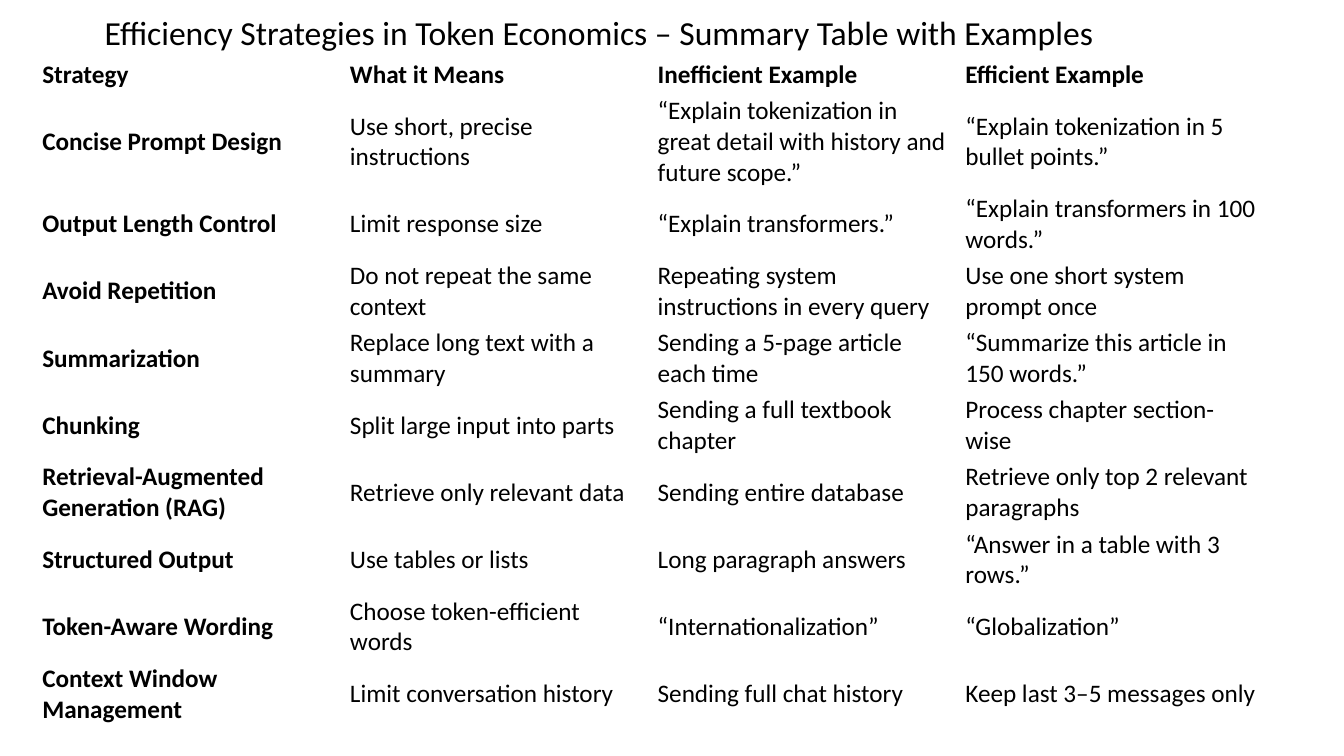
import pptx
import pptx.util
import pptx.dml.color
import pptx.enum.text

Pt = pptx.util.Pt
BLACK = pptx.dml.color.RGBColor(0, 0, 0)
FONT = "Calibri"

TITLE = "Efficiency Strategies in Token Economics – Summary Table with Examples"
STRATEGIES = [
    ("Strategy", "What it Means", "Inefficient Example", "Efficient Example"),
    ("Concise Prompt Design", "Use short, precise instructions",
     "“Explain tokenization in great detail with history and future scope.”",
     "“Explain tokenization in 5 bullet points.”"),
    ("Output Length Control", "Limit response size",
     "“Explain transformers.”", "“Explain transformers in 100 words.”"),
    ("Avoid Repetition", "Do not repeat the same context",
     "Repeating system instructions in every query",
     "Use one short system prompt once"),
    ("Summarization", "Replace long text with a summary",
     "Sending a 5-page article each time",
     "“Summarize this article in 150 words.”"),
    ("Chunking", "Split large input into parts",
     "Sending a full textbook chapter", "Process chapter section-wise"),
    ("Retrieval-Augmented Generation (RAG)", "Retrieve only relevant data",
     "Sending entire database", "Retrieve only top 2 relevant paragraphs"),
    ("Structured Output", "Use tables or lists",
     "Long paragraph answers", "“Answer in a table with 3 rows.”"),
    ("Token-Aware Wording", "Choose token-efficient words",
     "“Internationalization”", "“Globalization”"),
    ("Context Window Management", "Limit conversation history",
     "Sending full chat history", "Keep last 3–5 messages only"),
]
HEADER_HEIGHT = 26
PROMPT_HEIGHT = 69.9
STRATEGY_HEIGHT = 47.9


def add_run(paragraph, text, size, bold=False):
    run = paragraph.add_run()
    run.text = text
    run.font.name = FONT
    run.font.size = Pt(size)
    run.font.bold = bold
    run.font.color.rgb = BLACK


def add_title(slide, left, top, width, height):
    title = slide.shapes.add_textbox(Pt(left), Pt(top), Pt(width), Pt(height))
    title.text_frame.word_wrap = True
    title.text_frame.auto_size = pptx.enum.text.MSO_AUTO_SIZE.SHAPE_TO_FIT_TEXT
    add_run(title.text_frame.paragraphs[0], TITLE, 24)


def add_strategy_table(slide, left, top, width):
    heights = [HEADER_HEIGHT, PROMPT_HEIGHT]
    heights += [STRATEGY_HEIGHT] * (len(STRATEGIES) - len(heights))
    columns = len(STRATEGIES[0])
    summary = slide.shapes.add_table(
        len(STRATEGIES), columns,
        Pt(left), Pt(top), Pt(width), Pt(sum(heights))).table
    summary.first_row = False
    summary.horz_banding = False
    for column in summary.columns:
        column.width = Pt(width / columns)
    for row_index, (strategy, height) in enumerate(zip(STRATEGIES, heights)):
        summary.rows[row_index].height = Pt(height)
        for column_index, text in enumerate(strategy):
            cell = summary.cell(row_index, column_index)
            cell.fill.background()
            cell.vertical_anchor = pptx.enum.text.MSO_ANCHOR.MIDDLE
            cell.margin_left = cell.margin_right = Pt(5)
            cell.margin_top = cell.margin_bottom = Pt(2)
            add_run(cell.text_frame.paragraphs[0], text, 18,
                    row_index == 0 or column_index == 0)


def main():
    deck = pptx.Presentation()
    deck.slide_width = Pt(960)
    deck.slide_height = Pt(540)
    slide = deck.slides.add_slide(deck.slide_layouts[6])
    add_strategy_table(slide, 25.2, 40.3, 879.2)
    add_title(slide, 67.7, 5, 766, 36)
    deck.save("out.pptx")


if __name__ == "__main__":
    main()
